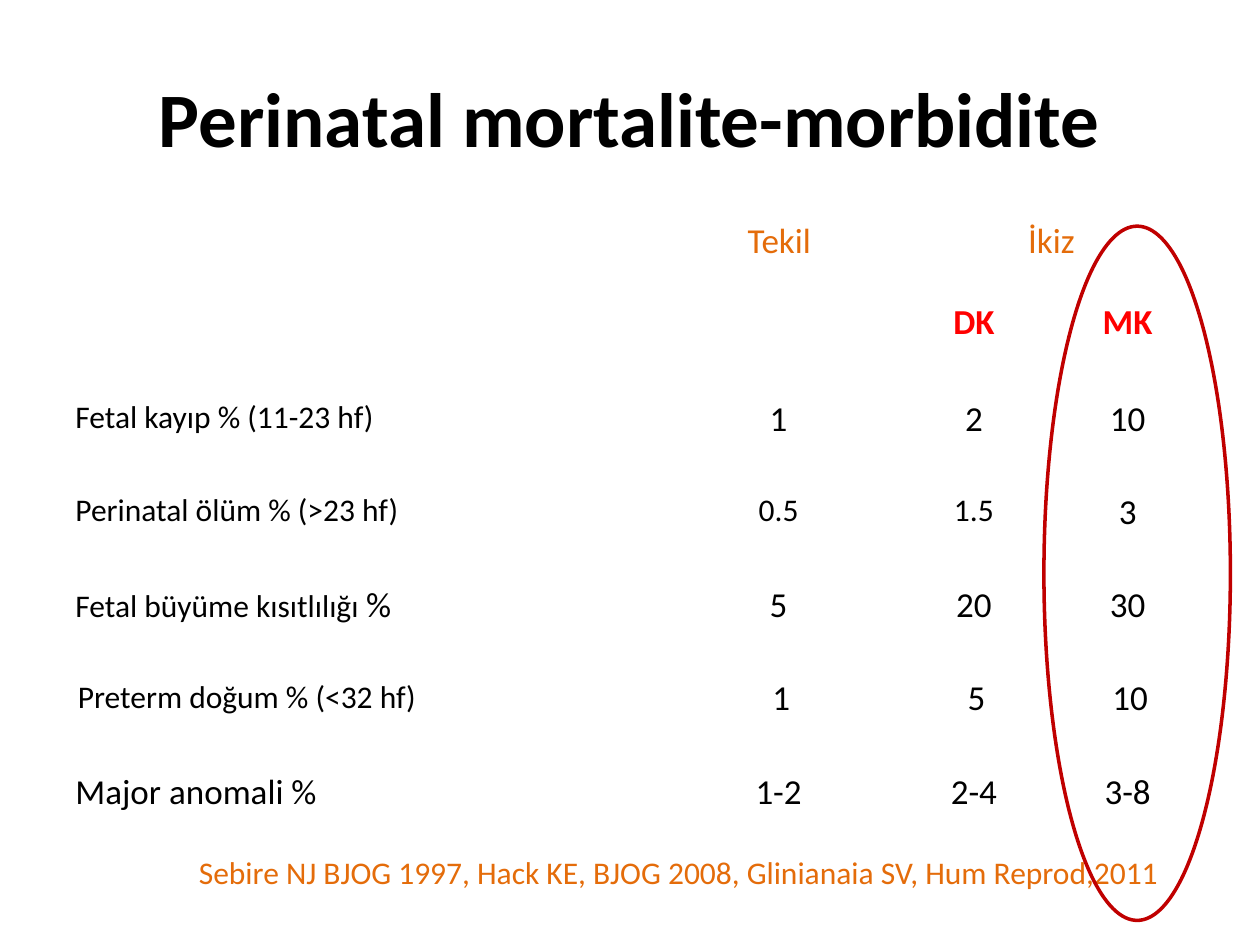
from dataclasses import dataclass

from pptx import Presentation
from pptx.dml.color import RGBColor
from pptx.enum.shapes import MSO_SHAPE
from pptx.enum.text import MSO_ANCHOR, PP_ALIGN
from pptx.shapes.autoshape import Shape
from pptx.slide import Slide
from pptx.util import Inches, Pt

RECT, OVAL = MSO_SHAPE.RECTANGLE, MSO_SHAPE.OVAL
TOP, MIDDLE = MSO_ANCHOR.TOP, MSO_ANCHOR.MIDDLE
LEFT, CENTER = PP_ALIGN.LEFT, PP_ALIGN.CENTER

BLACK = RGBColor(0x00, 0x00, 0x00)
WHITE = RGBColor(0xFF, 0xFF, 0xFF)
RED = RGBColor(0xFF, 0x00, 0x00)
DARK_RED = RGBColor(0xC0, 0x00, 0x00)
ORANGE = RGBColor(0xE4, 0x6C, 0x0A)

FONT = "Calibri"
SMALL, LARGE = 18, 20
LINE_SPACING = 0.8
FIRST_ROW, ROW_PITCH = 3.16, 0.74
GROUP_ROW, TYPE_ROW = 1.75, 2.39


@dataclass(frozen=True)
class Column:
    left: float
    width: float
    align: PP_ALIGN = CENTER


@dataclass(frozen=True)
class Run:
    text: str
    size: int = LARGE
    color: RGBColor = BLACK
    bold: bool = False


@dataclass(frozen=True)
class Row:
    cells: tuple[tuple[Run, ...], ...]
    shift: float = 0


LABEL = Column(0.5, 4.58, LEFT)
SINGLE = Column(5.65, 1.06)
DK = Column(7.2, 1.06)
MK = Column(8.42, 1.06)
SINGLE_HEAD = Column(5.35, 1.67)
TWIN_HEAD = Column(DK.left, 2.29)
COLUMNS = (LABEL, SINGLE, DK, MK)

HEADERS = (
    (SINGLE_HEAD, GROUP_ROW, Run("Tekil", color=ORANGE)),
    (TWIN_HEAD, GROUP_ROW, Run("İkiz", color=ORANGE)),
    (DK, TYPE_ROW, Run("DK", color=RED, bold=True)),
    (MK, TYPE_ROW, Run("MK", color=RED, bold=True)),
)

ROWS = (
    Row(((Run("Fetal kayıp % (11-23 hf)", SMALL),),
         (Run("1"),), (Run("2"),), (Run("10"),))),
    Row(((Run("Perinatal ölüm % (>23 hf)", SMALL),),
         (Run("0.5", SMALL),), (Run("1.5", SMALL),), (Run("3"),))),
    Row(((Run("Fetal büyüme kısıtlılığı ", SMALL), Run("%")),
         (Run("5"),), (Run("20"),), (Run("30"),))),
    Row(((Run("Preterm doğum % (<32 hf)", SMALL),),
         (Run("1"),), (Run("5"),), (Run("10"),)), shift=0.02),
    Row(((Run("Major anomali %"),),
         (Run("1-2"),), (Run("2-4"),), (Run("3-8"),))),
)


def write(sp: Shape, runs: tuple[Run, ...], align: PP_ALIGN,
          anchor: MSO_ANCHOR = TOP, spacing: float = 1.0) -> None:
    tf = sp.text_frame
    tf.word_wrap = True
    tf.vertical_anchor = anchor
    p = tf.paragraphs[0]
    p.alignment = align
    p.line_spacing = spacing
    for run in runs:
        r = p.add_run()
        r.text = run.text
        r.font.name = FONT
        r.font.size = Pt(run.size)
        r.font.bold = run.bold
        r.font.color.rgb = run.color


def add_outline(s: Slide, kind: MSO_SHAPE, box: tuple[float, ...],
                color: RGBColor, weight: float) -> Shape:
    sp = s.shapes.add_shape(kind, *map(Inches, box))
    sp.shadow.inherit = False
    sp.fill.background()
    sp.line.color.rgb = color
    sp.line.width = Pt(weight)
    return sp


def add_cell(s: Slide, col: Column, top: float, runs: tuple[Run, ...],
             shift: float = 0) -> None:
    size = max(run.size for run in runs)
    height = size * 1.2 * LINE_SPACING / 72 + 0.1
    sp = add_outline(s, RECT, (col.left + shift, top, col.width, height), WHITE, 1)
    write(sp, runs, col.align, spacing=LINE_SPACING)


def add_text(s: Slide, box: tuple[float, ...], run: Run, align: PP_ALIGN,
             anchor: MSO_ANCHOR = TOP) -> None:
    sp = s.shapes.add_textbox(*map(Inches, box))
    write(sp, (run,), align, anchor)


def main() -> None:
    prs = Presentation()
    prs.slide_width, prs.slide_height = Inches(10), Inches(7.5)
    s = prs.slides.add_slide(prs.slide_layouts[6])

    add_text(s, (0.5, 0.3, 9, 1.25),
             Run("Perinatal mortalite-morbidite", 44, bold=True), CENTER, MIDDLE)
    for col, top, run in HEADERS:
        add_cell(s, col, top, (run,))
    for i, row in enumerate(ROWS):
        for col, runs in zip(COLUMNS, row.cells):
            add_cell(s, col, FIRST_ROW + i * ROW_PITCH, runs, row.shift)
    add_text(s, (1.48, 6.72, 8.28, 0.4),
             Run("Sebire NJ BJOG 1997, Hack KE, BJOG 2008, Glinianaia SV, Hum Reprod,2011",
                 SMALL, ORANGE), LEFT)
    highlight = add_outline(s, OVAL, (6.27, 3.81, 5.51, 1.48), DARK_RED, 2)
    highlight.rotation = 90

    prs.save("out.pptx")


if __name__ == "__main__":
    main()
